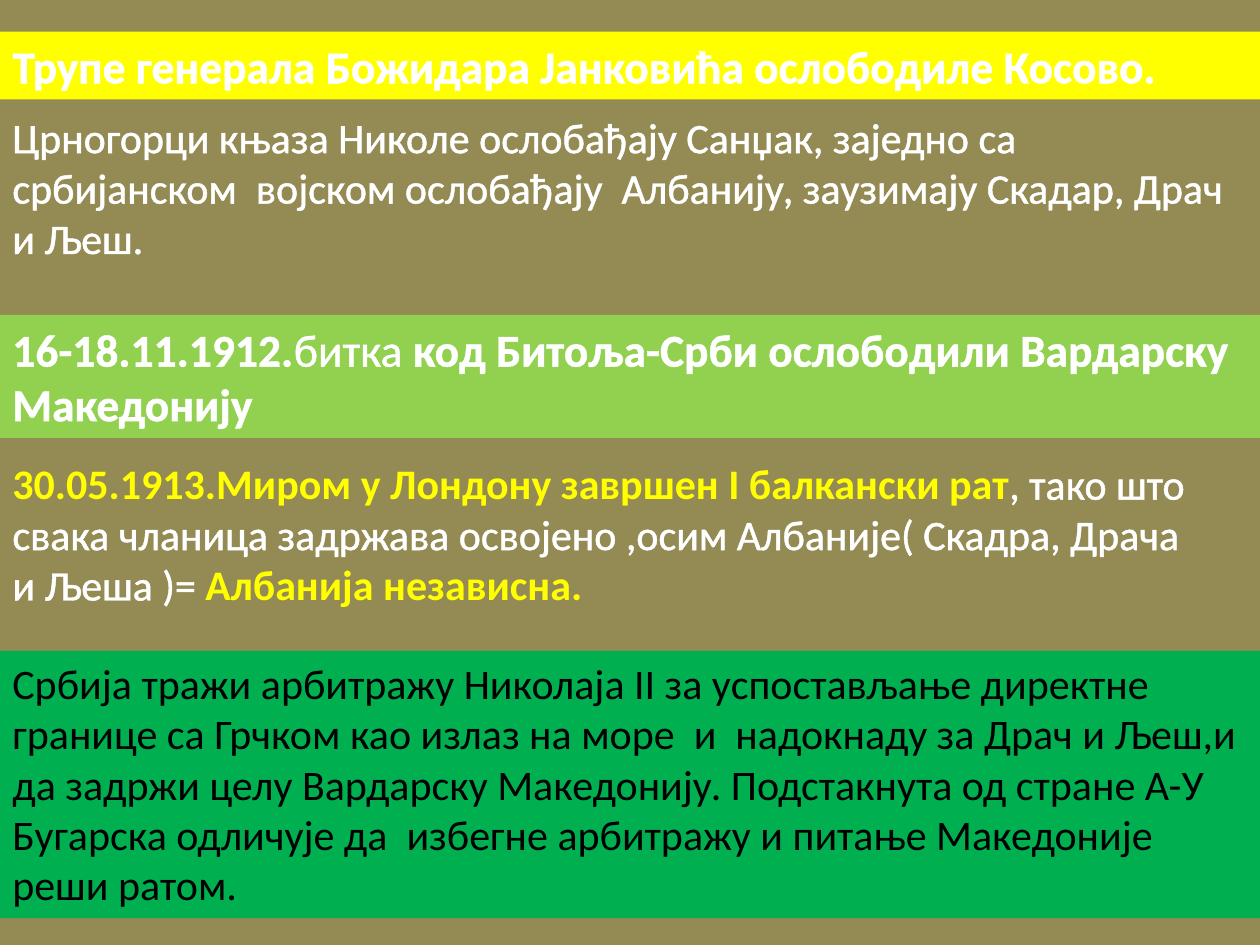
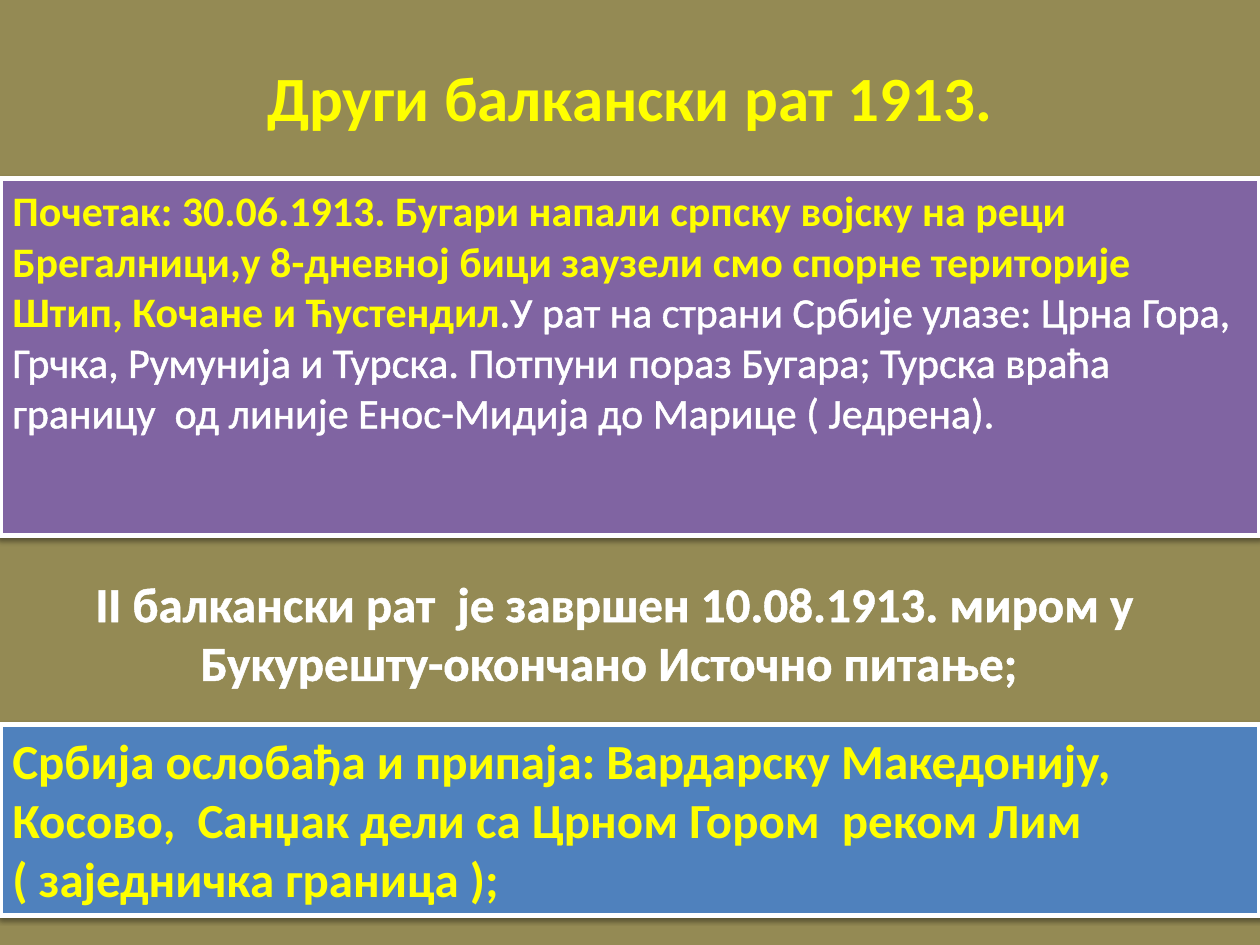
from dataclasses import dataclass

from lxml import etree
from pptx import Presentation
from pptx import util as u
from pptx.dml.color import RGBColor
from pptx.enum import shapes, text
from pptx.oxml import parse_xml
from pptx.oxml.ns import nsdecls, qn


@dataclass(frozen=True)
class Theme:
    font: str = "Calibri"
    olive: str = "948A54"
    yellow: str = "FFFF00"
    white: str = "FFFFFF"
    black: str = "000000"
    lime: str = "92D050"
    green: str = "00B050"
    purple: str = "8064A2"
    blue: str = "4F81BD"
    body: int = 24
    lead: int = 26
    large: int = 28
    title: int = 36
    outline: float = 1.45
    border: float = 3


THEME = Theme()
WIDTH, HEIGHT = 720, 540
FRAME = {
    "word_wrap": True,
    "auto_size": text.MSO_AUTO_SIZE.NONE,
    "vertical_anchor": text.MSO_ANCHOR.TOP,
}


def apply(target, values):
    for name, value in values.items():
        setattr(target, name, value)


def paint(fill, color):
    fill.solid()
    fill.fore_color.rgb = RGBColor.from_string(color)


def outline_text(run):
    """Give the letters a thin white outline."""
    outline = parse_xml(
        f'<a:ln {nsdecls("a")} w="{int(u.Pt(THEME.outline))}"><a:solidFill>'
        f'<a:srgbClr val="{THEME.white}"/></a:solidFill></a:ln>')
    run.font._element.insert(0, outline)


def write(shape, paragraphs, size, align=text.PP_ALIGN.LEFT, outlined=True):
    """Fill a shape with paragraphs made of (wording, color, bold) runs."""
    frame = shape.text_frame
    apply(frame, FRAME)
    for index, runs in enumerate(paragraphs):
        paragraph = frame.add_paragraph() if index else frame.paragraphs[0]
        paragraph.alignment = align
        for wording, color, bold in runs:
            run = paragraph.add_run()
            run.text = wording
            apply(run.font, {"name": THEME.font, "size": u.Pt(size), "bold": bold})
            paint(run.font.fill, color)
            if outlined:
                outline_text(run)


def place(shape, left, top, width, height):
    apply(shape, {"left": u.Pt(left), "top": u.Pt(top),
                  "width": u.Pt(width), "height": u.Pt(height)})


def add_title(slide, box, runs, size, fill=None, **style):
    title = slide.shapes.title
    place(title, *box)
    if fill:
        paint(title.fill, fill)
    write(title, [runs], size, **style)


def add_text(slide, top, width, height, runs, size, **style):
    box = slide.shapes.add_textbox(0, u.Pt(top), u.Pt(width), u.Pt(height))
    write(box, [runs], size, **style)


def add_band(slide, top, height, fill, paragraphs, size, **style):
    """Add a full-width coloured band with text."""
    band = slide.shapes.add_shape(
        shapes.MSO_SHAPE.RECTANGLE, 0, u.Pt(top), u.Pt(WIDTH), u.Pt(height))
    band.shadow.inherit = False
    paint(band.fill, fill)
    band.line.fill.background()
    write(band, paragraphs, size, **style)
    return band


def add_framed_band(slide, *content):
    """Add a band with a white border and a soft shadow below it."""
    band = add_band(slide, *content)
    paint(band.line.fill, THEME.white)
    band.line.width = u.Pt(THEME.border)
    effects = band._element.spPr.find(qn("a:effectLst"))
    shadow = etree.SubElement(
        effects, qn("a:outerShdw"), blurRad=str(int(u.Pt(3.1))),
        dist=str(int(u.Pt(1.6))), dir="5400000", rotWithShape="0")
    color = etree.SubElement(shadow, qn("a:srgbClr"), val=THEME.black)
    etree.SubElement(color, qn("a:alpha"), val="38000")


def build_first_war(slide):
    # Liberation of Kosovo and the Montenegrin advance
    add_title(slide, (0, 18, WIDTH, 38.8),
              [("Трупе генерала Божидара Јанковића ослободиле Косово.", THEME.white, True)],
              THEME.lead, THEME.yellow)
    add_text(slide, 60, WIDTH, 94.5, [
        ("Црногорци књаза Николе ослобађају Санџак, заједно са србијанском  војском "
         "ослобађају  Албанију, заузимају Скадар, Драч и Љеш.", THEME.white, False)],
        THEME.body)

    # Battle of Bitola
    add_band(slide, 180, 70.3, THEME.lime, [[
        ("16-18.11.1912.", THEME.white, True),
        ("битка", THEME.white, False),
        (" код Битоља-Срби ослободили Вардарску Македонију", THEME.white, True)]],
        THEME.lead)

    # Peace of London and the dispute after it
    add_text(slide, 258, 696, 94.5, [
        ("30.05.1913.Миром у Лондону завршен I балкански рат", THEME.yellow, True),
        (", тако што свака чланица задржава освојено ,осим Албаније( Скадра, Драча "
         "и Љеша )= ", THEME.white, False),
        ("Албанија независна.", THEME.yellow, True)], THEME.body)
    add_band(slide, 372, 152.7, THEME.green, [[
        ("Србија тражи арбитражу Николаја II зa успостављање директне границе са "
         "Грчком као излаз на море  и  надокнаду за Драч и Љеш,и да задржи целу "
         "Вардарску Македонију. Подстакнута од стране А-У Бугарска одличује да  "
         "избегне арбитражу и питање Македоније реши ратом.", THEME.black, False)]],
        THEME.body, outlined=False)


def build_second_war(slide):
    add_title(slide, (48, 30, 624, 51),
              [("Други балкански рат 1913.", THEME.yellow, True)],
              THEME.title, align=text.PP_ALIGN.CENTER, outlined=False)

    # Course of the war
    add_framed_band(slide, 102, 204, THEME.purple, [[
        ("Почетак: 30.06.1913. Бугари напали српску војску на реци Брегалници,у "
         "8-дневној бици заузели смо спорне територије Штип, Кочане и Ћустендил",
         THEME.yellow, True),
        (".У рат на страни Србије улазе: Црна Гора, Грчка, Румунија и Турска. "
         "Потпуни пораз Бугара; Турска враћа границу  од линије Енос-Мидија до "
         "Марице ( Једрена).", THEME.white, False)]], THEME.body)

    # Outcome
    add_framed_band(slide, 414, 109, THEME.blue, [
        [("Србија ослобађа и припаја: Вардарску Македонију, Косово,  Санџак дели са "
          "Црном Гором  реком Лим", THEME.yellow, True)],
        [("( заједничка граница );", THEME.yellow, True)]], THEME.large)
    add_text(slide, 324, 702, 97, [
        ("II балкански рат  је завршен 10.08.1913. миром у Букурешту-окончано "
         "Источно питање; ", THEME.white, True)],
        THEME.large, align=text.PP_ALIGN.CENTER)


def main():
    presentation = Presentation()
    apply(presentation, {"slide_width": u.Pt(WIDTH), "slide_height": u.Pt(HEIGHT)})
    paint(presentation.slide_master.background.fill, THEME.olive)
    title_only = presentation.slide_layouts.get_by_name("Title Only")
    for build in (build_first_war, build_second_war):
        build(presentation.slides.add_slide(title_only))
    presentation.save("out.pptx")


if __name__ == "__main__":
    main()
